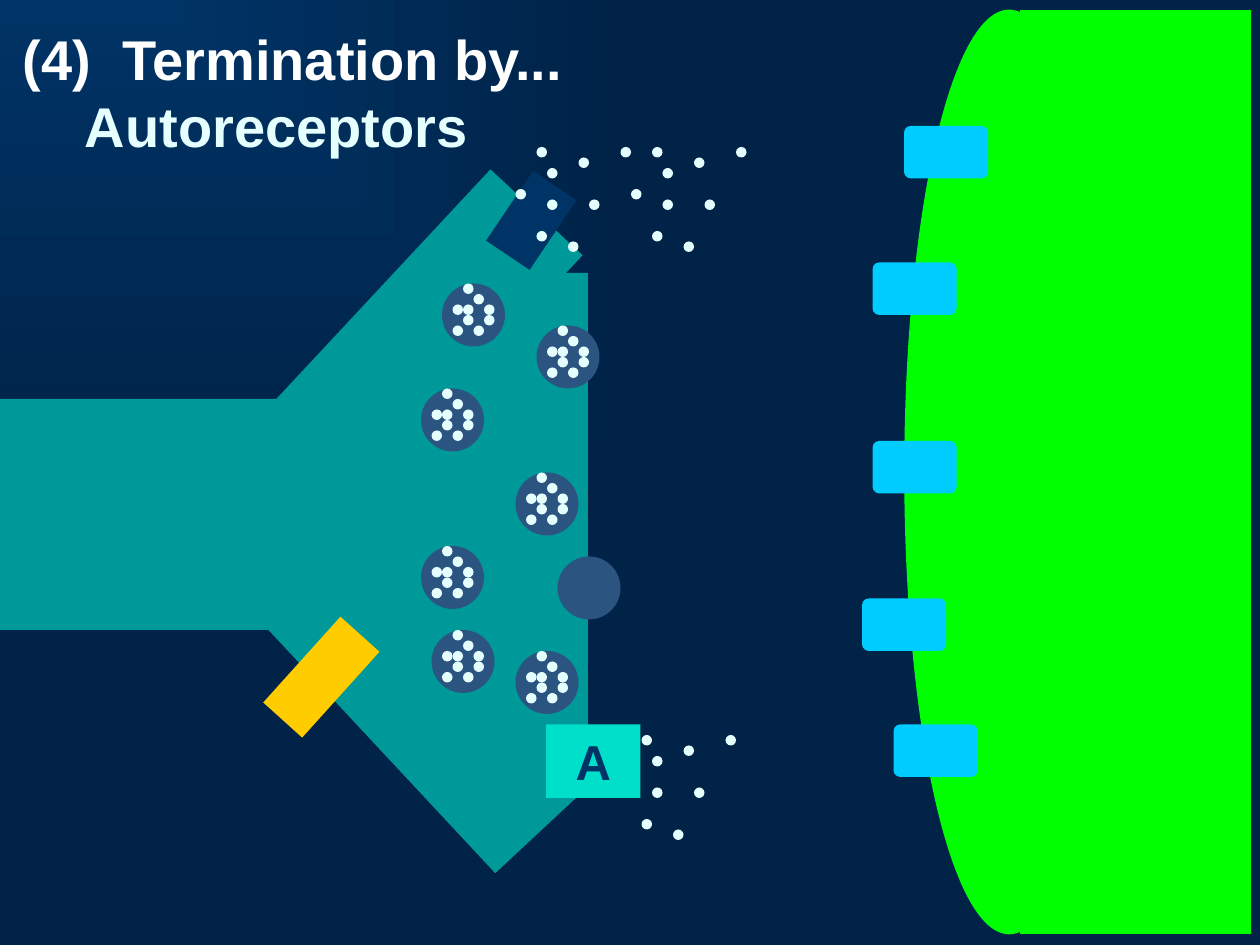
from lxml.etree import SubElement
from pptx import Presentation
from pptx.dml.color import RGBColor
from pptx.enum.shapes import MSO_SHAPE
from pptx.enum.text import MSO_ANCHOR, PP_ALIGN
from pptx.oxml.ns import qn
from pptx.util import Inches, Pt

COLORS = {
    "glow": "003366", "night": "002347", "neuron": "009999", "vesicle": "2B5481",
    "transmitter": "E5FFFF", "target": "00FF00", "receptor": "00CCFF",
    "channel": "FFCC00", "autoreceptor": "00DFCA", "title": "FFFFFF",
}

deck = Presentation()
deck.slide_width, deck.slide_height = Inches(10), Inches(7.5)
slide = deck.slides.add_slide(deck.slide_layouts[6])
COLUMN = deck.slide_width / 120
ROW = deck.slide_height / 90
SHIFT = 0.1


def place(parent, preset, col, row, cols, rows, color, turn=0):
    part = parent.shapes.add_shape(
        preset, round(col * COLUMN), round(row * ROW),
        round(cols * COLUMN), round(rows * ROW))
    part.shadow.inherit = False
    part.fill.solid()
    part.fill.fore_color.rgb = RGBColor.from_string(COLORS[color])
    part.line.fill.background()
    part.rotation = turn
    return part


def style(paragraph, size, color):
    for run in paragraph.runs:
        run.font.name = "Arial"
        run.font.size = Pt(size)
        run.font.bold = True
        run.font.color.rgb = RGBColor.from_string(COLORS[color])


backdrop = slide.background.fill
backdrop.gradient()
for stop, color in zip(backdrop.gradient_stops, ("glow", "night")):
    stop.color.rgb = RGBColor.from_string(COLORS[color])
gradient = slide.element.find(".//" + qn("a:gradFill"))
gradient.remove(gradient.find(qn("a:lin")))
glow_path = SubElement(gradient, qn("a:path"), {"path": "rect"})
SubElement(glow_path, qn("a:fillToRect"), {"r": "100000", "b": "100000"})

neuron = slide.shapes.add_group_shape()
for col, row, cols, rows, turn in [
    (0, 38, 55.9, 22, 0),
    (19.4, 28, 37.7, 12, 313),
    (20.6, 60.1, 36.6, 11.5, 227),
    (39.8, 26, 16.2, 48, 0),
]:
    place(neuron, MSO_SHAPE.RECTANGLE, col, row, cols, rows, "neuron", turn)

contents = [(1, 2), (3, 4), (4, 2), (3, 1), (1, 4), (2, 2), (4, 3), (2, 0), (2, 3)]
for col, row in [(40, 37), (40, 52), (49, 45), (51, 31), (49, 62), (41, 60), (42, 27)]:
    vesicle = slide.shapes.add_group_shape()
    place(vesicle, MSO_SHAPE.OVAL, col + SHIFT, row, 6, 6, "vesicle")
    for right, down in contents:
        place(vesicle, MSO_SHAPE.OVAL, col + right + SHIFT, row + down, 1, 1, "transmitter")
place(slide, MSO_SHAPE.OVAL, 53 + SHIFT, 53, 6, 6, "vesicle")

target = slide.shapes.add_group_shape()
for preset, col, cols in [(MSO_SHAPE.OVAL, 86.2, 19.8), (MSO_SHAPE.RECTANGLE, 97.2, 21.9)]:
    membrane = place(target, preset, col, 1, cols, 87.9, "target")
    membrane.line.color.rgb = RGBColor.from_string(COLORS["target"])
    membrane.line.width = Pt(1)

receptors = slide.shapes.add_group_shape()
for col, row in [(86, 12), (83, 25), (83, 42), (82, 57), (85, 69)]:
    receptor = place(receptors, MSO_SHAPE.ROUNDED_RECTANGLE, col + SHIFT, row, 8, 5, "receptor")
    receptor.adjustments[0] = 0.125

place(slide, MSO_SHAPE.RECTANGLE, 28.1, 59, 5, 11, "channel", 42)
place(slide, MSO_SHAPE.RECTANGLE, 48 + SHIFT, 17, 5, 8, "glow", 34)

released = [(0, 4), (5, 9), (6, 1), (10, 0), (2, 8), (3, 2), (7, 5), (2, 0), (3, 5)]
for col, row, drift in [(60, 14, released), (49, 14, released), (59, 70, released[1:])]:
    cloud = slide.shapes.add_group_shape()
    for right, down in drift:
        place(cloud, MSO_SHAPE.OVAL, col + right + SHIFT, row + down, 1, 1, "transmitter")

autoreceptor = place(slide, MSO_SHAPE.RECTANGLE, 52, 69, 9, 7, "autoreceptor")
autoreceptor.text_frame.text = "A"
autoreceptor.text_frame.vertical_anchor = MSO_ANCHOR.MIDDLE
letter = autoreceptor.text_frame.paragraphs[0]
letter.alignment = PP_ALIGN.CENTER
style(letter, 28, "glow")

title = slide.shapes.add_textbox(
    round(COLUMN), round(1.7 * ROW), round(54.1 * COLUMN), round(14.2 * ROW)).text_frame
title.word_wrap = False
title.text = "(4)  Termination by...\nAutoreceptors"
heading, topic = title.paragraphs
style(heading, 32, "title")
style(topic, 32, "transmitter")
topic._p.get_or_add_pPr().set("marL", str(round(5.9 * COLUMN)))

deck.save("out.pptx")
